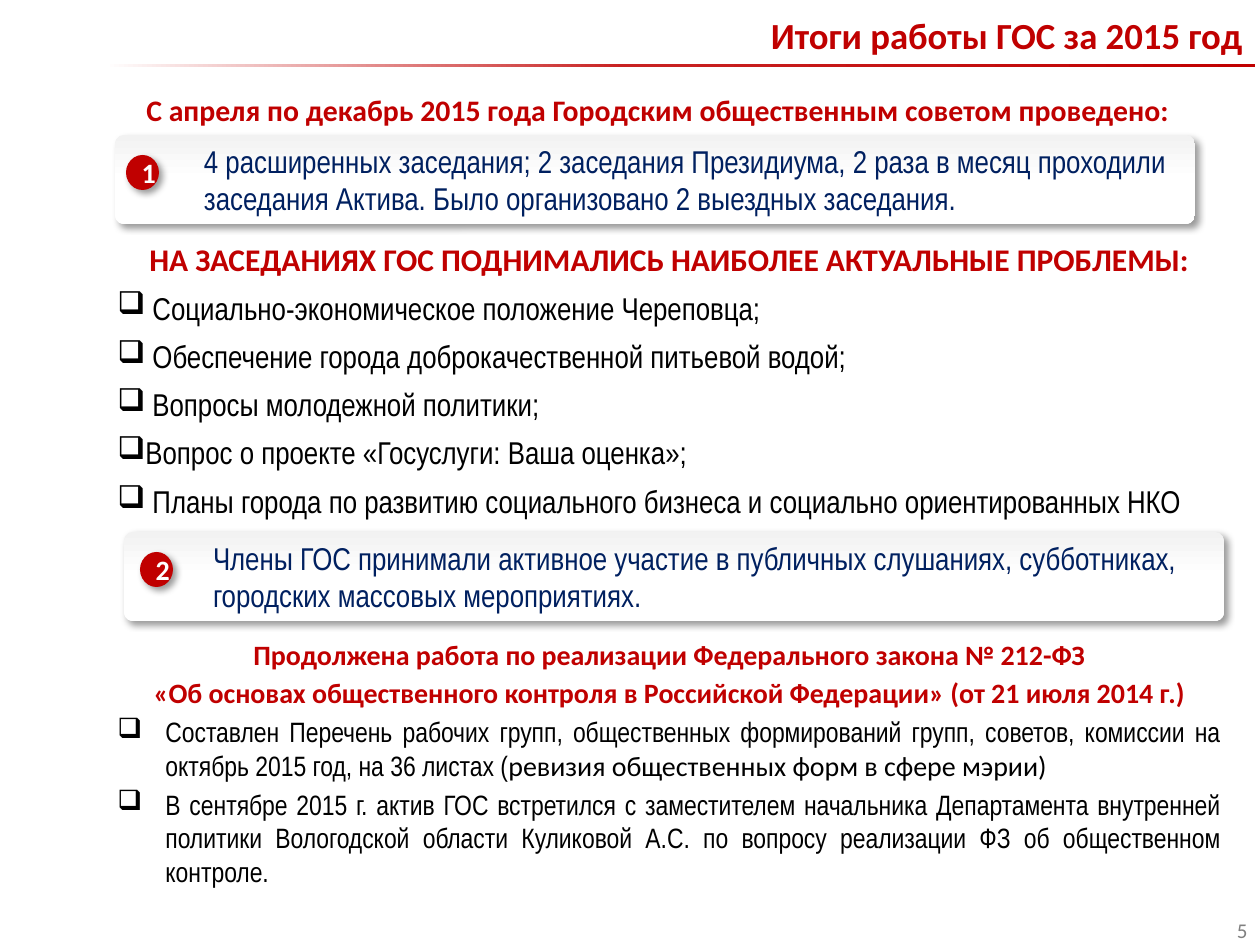
from dataclasses import dataclass

from pptx import Presentation
from pptx import util as u
from pptx.dml import color
from pptx.enum import shapes, text
from pptx.oxml import parse_xml
from pptx.oxml import ns

PX = u.Inches(1) / 126
ALIGN = text.PP_ALIGN


@dataclass(frozen=True)
class Theme:
    red: str = "C00000"
    navy: str = "002060"
    black: str = "000000"
    white: str = "FFFFFF"
    grey: str = "808080"
    heading_font: str = "Calibri"
    body_font: str = "Arial Narrow"
    title_size: int = 21
    lead_size: int = 17
    body_size: int = 18
    detail_size: int = 16
    number_size: int = 12
    rule_stops: tuple = ((0, "FFFFFF"), (45, "C82222"), (100, "C00000"))
    card_stops: tuple = ((0, "F2F2F2"), (50, "FFFFFF"), (100, "FFFFFF"))


def px(*lengths):
    return [u.Emu(round(length * PX)) for length in lengths]


class SlideBuilder:
    def __init__(self, slide, theme):
        self.slide = slide
        self.theme = theme

    def style(self, size, hue, font=None, bold=False):
        return {"size": u.Pt(size), "name": font or self.theme.heading_font,
                "bold": bold, "color": hue}

    def fill_paragraph(self, para, *runs, indent=None, bullet=False, **formats):
        """Fill a paragraph with (words, style) runs; indent is (left, first line)."""
        for name, value in formats.items():
            setattr(para, name, value)
        props = para._p.get_or_add_pPr()
        if indent:
            for name, length in zip(("marL", "indent"), px(*indent)):
                props.set(name, str(length))
        if bullet:
            props.append(parse_xml(f'<a:buChar {ns.nsdecls("a")} char="❑"/>'))
        for words, style in runs:
            span = para.add_run()
            span.text = words
            for name, value in style.items():
                if name == "color":
                    span.font.color.rgb = color.RGBColor.from_string(value)
                else:
                    setattr(span.font, name, value)

    def text_box(self, *place):
        box = self.slide.shapes.add_textbox(*px(*place))
        box.text_frame.word_wrap = True
        return box.text_frame

    def line(self, place, words, style, **formats):
        para = self.text_box(*place).paragraphs[0]
        self.fill_paragraph(para, (words, style), **formats)

    def paragraphs(self, place, items):
        """Put (runs, formats) items into one text box."""
        frame = self.text_box(*place)
        for index, (runs, formats) in enumerate(items):
            para = frame.add_paragraph() if index else frame.paragraphs[0]
            self.fill_paragraph(para, *runs, **formats)

    def shape(self, kind, place, fill=None, stops=(), angle=0, shadow=False):
        shape = self.slide.shapes.add_shape(kind, *px(*place))
        shape.shadow.inherit = False
        shape.line.fill.background()
        if fill:
            shape.fill.solid()
            shape.fill.fore_color.rgb = color.RGBColor.from_string(fill)
        else:
            shape.fill.gradient()
            shape.fill.gradient_angle = angle
            self.set_stops(shape, stops)
        if shadow:
            effects = shape._element.spPr.find(ns.qn("a:effectLst"))
            effects.append(parse_xml(
                f'<a:outerShdw {ns.nsdecls("a")} blurRad="{u.Pt(4)}" dist="{u.Pt(3)}"'
                ' dir="2700000" algn="tl" rotWithShape="0">'
                f'<a:srgbClr val="{self.theme.black}"><a:alpha val="40000"/></a:srgbClr>'
                '</a:outerShdw>'))
        return shape

    @staticmethod
    def set_stops(shape, stops):
        stop_list = shape._element.spPr.find(".//" + ns.qn("a:gsLst"))
        for old in list(stop_list):
            stop_list.remove(old)
        for percent, hue in stops:
            stop_list.append(parse_xml(
                f'<a:gs {ns.nsdecls("a")} pos="{percent * 1000}">'
                f'<a:srgbClr val="{hue}"/></a:gs>'))

    def card(self, place, words):
        card = self.shape(shapes.MSO_SHAPE.ROUNDED_RECTANGLE, place,
                          stops=self.theme.card_stops, angle=270, shadow=True)
        card.adjustments[0] = 0.1
        card.text_frame.vertical_anchor = text.MSO_ANCHOR.MIDDLE
        style = self.style(self.theme.body_size, self.theme.navy, self.theme.body_font)
        self.fill_paragraph(card.text_frame.paragraphs[0], (words, style),
                            indent=(74, 0), alignment=ALIGN.LEFT)

    def badge(self, left, top, number):
        badge = self.shape(shapes.MSO_SHAPE.OVAL, (left, top, 33, 35),
                           fill=self.theme.red, shadow=True)
        badge.text_frame.vertical_anchor = text.MSO_ANCHOR.MIDDLE
        style = self.style(self.theme.detail_size, self.theme.white, bold=True)
        self.fill_paragraph(badge.text_frame.paragraphs[0], (number, style),
                            alignment=ALIGN.CENTER)


def main():
    theme = Theme()
    deck = Presentation()
    deck.slide_width, deck.slide_height = px(1260, 945)
    page = SlideBuilder(deck.slides.add_slide(deck.slide_layouts[6]), theme)

    page.line((1086, 911, 174, 38), "5", page.style(theme.number_size, theme.grey),
              alignment=ALIGN.RIGHT)
    page.line((95, 16, 1160, 48), "Итоги работы ГОС за 2015 год",
              page.style(theme.title_size, theme.red, bold=True),
              alignment=ALIGN.RIGHT, line_spacing=u.Pt(20))
    page.shape(shapes.MSO_SHAPE.RECTANGLE, (105, 64, 1150, 3), stops=theme.rule_stops)

    heading = page.style(theme.body_size, theme.red, bold=True)
    body = page.style(theme.body_size, theme.black, theme.body_font)
    problems = [
        ("Социально-экономическое положение Череповца;", 35),
        ("Обеспечение города доброкачественной питьевой водой;", 35),
        ("Вопросы молодежной политики;", 35),
        ("Вопрос о проекте «Госуслуги: Ваша оценка»;", 28),
        ("Планы города по развитию социального бизнеса и социально ориентированных НКО", 35),
    ]
    gap = {"space_after": u.Pt(6)}
    page.paragraphs((105, 234, 1129, 307), [
        ([("НА ЗАСЕДАНИЯХ ГОС ПОДНИМАЛИСЬ НАИБОЛЕЕ АКТУАЛЬНЫЕ ПРОБЛЕМЫ:", heading)],
         {"alignment": ALIGN.CENTER, **gap}),
        *(([(words, body)],
           {"alignment": ALIGN.JUSTIFY, "bullet": True, "indent": (hang, -hang), **gap})
          for words, hang in problems),
    ])

    page.line((134, 86, 1081, 48),
              "С апреля по декабрь 2015 года Городским общественным советом проведено:",
              page.style(theme.lead_size, theme.red, bold=True), line_spacing=u.Pt(20))

    page.card((115, 135, 1080, 89),
              "4 расширенных заседания; 2 заседания Президиума, 2 раза в месяц проходили "
              "заседания Актива. Было организовано 2 выездных заседания.")
    page.badge(126, 155, "1")
    page.card((124, 532, 1100, 89),
              "Члены ГОС принимали активное участие в публичных слушаниях, субботниках, "
              "городских массовых мероприятиях.")
    page.badge(140, 552, "2")

    law = page.style(theme.detail_size, theme.red, bold=True)
    detail = page.style(theme.detail_size, theme.black, theme.body_font)
    remark = page.style(theme.detail_size, theme.black)
    before = {"space_before": u.Pt(3)}
    listed = {"alignment": ALIGN.JUSTIFY, "bullet": True, "indent": (48, -48), **before}
    page.paragraphs((105, 631, 1129, 277), [
        ([("Продолжена работа по реализации Федерального закона № 212-ФЗ", law)],
         {"alignment": ALIGN.CENTER}),
        ([("«Об основах общественного контроля в Российской Федерации» "
           "(от 21 июля 2014 г.)", law)], {"alignment": ALIGN.CENTER, **before}),
        ([("Составлен Перечень рабочих групп, общественных формирований групп, советов, "
           "комиссии на октябрь 2015 год, на 36 листах (", detail),
          ("ревизия общественных форм в сфере мэрии)", remark)], listed),
        ([("В сентябре 2015 г. актив ГОС встретился с заместителем начальника "
           "Департамента внутренней политики Вологодской области Куликовой А.С. "
           "по вопросу реализации ФЗ об общественном контроле.", detail)], listed),
    ])
    deck.save("out.pptx")


if __name__ == "__main__":
    main()
